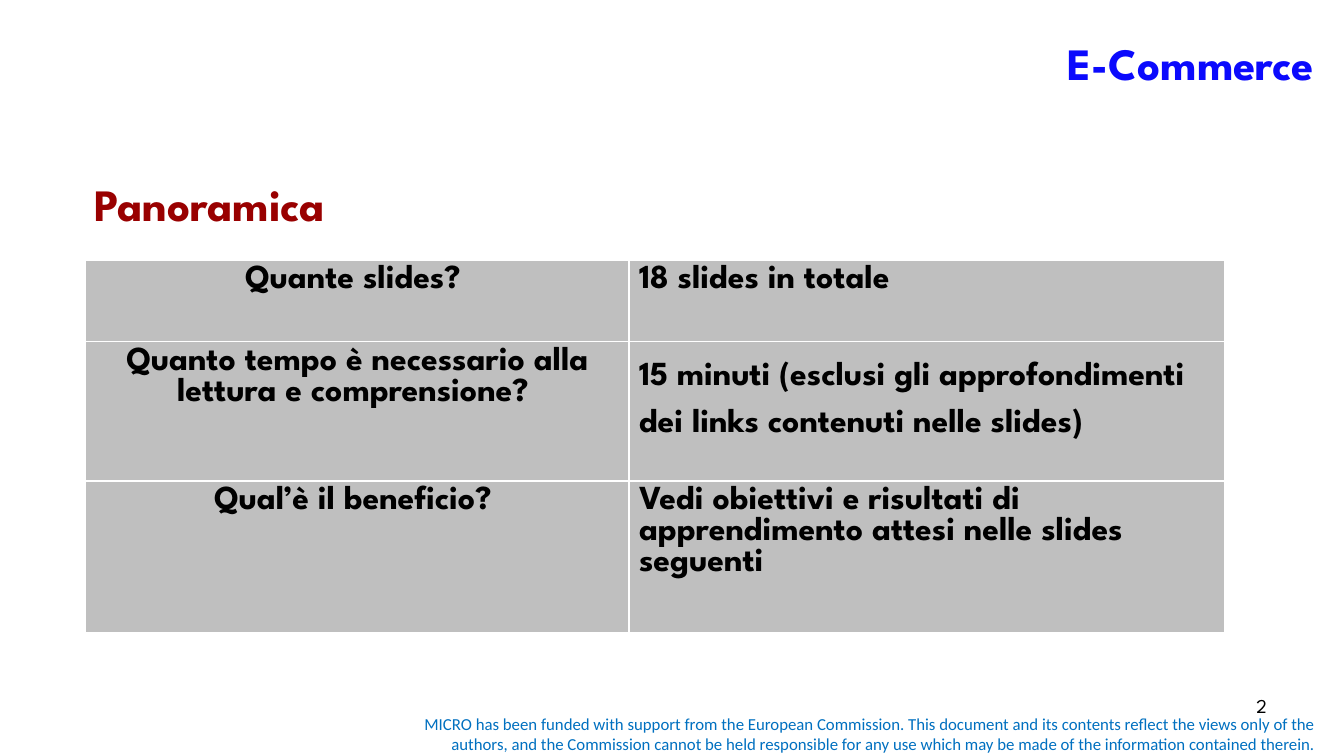
from dataclasses import dataclass
from lxml.etree import SubElement
from pptx import Presentation
from pptx.dml.color import RGBColor as RGB
from pptx.enum.text import MSO_ANCHOR as Anchor, PP_ALIGN as Align
from pptx.oxml.ns import qn
from pptx.util import Cm, Pt


@dataclass(frozen=True)
class Theme:
    heading_font: str = "League Spartan"
    note_font: str = "Calibri"
    title: str = "0B0AFD"
    section: str = "990000"
    text: str = "000000"
    note: str = "0070C0"
    cell: str = "BFBFBF"
    border: str = "FFFFFF"
    heading_size: int = 32
    table_size: int = 24
    number_size: int = 14
    note_size: int = 12


def write(tf, text, size, color, font, bold=False, align=Align.LEFT,
          anchor=Anchor.TOP, spacing=None):
    tf.word_wrap = True
    tf.vertical_anchor = anchor
    p = tf.paragraphs[0]
    p.alignment = align
    if spacing:
        p.line_spacing = spacing
    r = p.add_run()
    r.text = text
    r.font.name = font
    r.font.size = Pt(size)
    r.font.bold = bold
    r.font.color.rgb = RGB.from_string(color)


def draw_borders(cell, color):
    tc_pr = cell._tc.get_or_add_tcPr()
    for i, side in enumerate(("lnL", "lnR", "lnT", "lnB")):
        ln = tc_pr.makeelement(qn(f"a:{side}"), {"w": str(Pt(1))})
        fill = SubElement(ln, qn("a:solidFill"))
        SubElement(fill, qn("a:srgbClr"), val=color)
        tc_pr.insert(i, ln)


class Deck:
    def __init__(self, theme):
        self.theme = theme
        self.prs = Presentation()
        self.prs.slide_width, self.prs.slide_height = Cm(33.87), Cm(19.05)
        self.slide = self.prs.slides.add_slide(self.prs.slide_layouts[5])

    def title(self, text, box):
        sp = self.slide.shapes.title
        sp.left, sp.top, sp.width, sp.height = map(Cm, box)
        t = self.theme
        write(sp.text_frame, text, t.heading_size, t.title, t.heading_font,
              bold=True, align=Align.RIGHT, anchor=Anchor.MIDDLE)

    def text(self, text, box, size, color, font, **fmt):
        sp = self.slide.shapes.add_textbox(*map(Cm, box))
        write(sp.text_frame, text, size, color, font, **fmt)

    def table(self, rows, left, top, widths, heights, spacings):
        t = self.theme
        frame = self.slide.shapes.add_table(
            len(rows), len(widths), Cm(left), Cm(top),
            Cm(sum(widths)), Cm(sum(heights)))
        table = frame.table
        for col, width in zip(table.columns, widths):
            col.width = Cm(width)
        for i, (row, texts) in enumerate(zip(table.rows, rows)):
            row.height = Cm(heights[i])
            for j, (cell, text) in enumerate(zip(row.cells, texts)):
                cell.fill.solid()
                cell.fill.fore_color.rgb = RGB.from_string(t.cell)
                draw_borders(cell, t.border)
                write(cell.text_frame, text, t.table_size, t.text,
                      t.heading_font, bold=True,
                      align=Align.LEFT if j else Align.CENTER,
                      spacing=spacings.get((i, j)))


def main():
    t = Theme()
    deck = Deck(t)
    deck.text("MICRO has been funded with support from the European Commission. "
              "This document and its contents reflect the views only of the "
              "authors, and the Commission cannot be held responsible for any "
              "use which may be made of the information contained therein.",
              (9.53, 17.86, 23.88, 1.27), t.note_size, t.note, t.note_font,
              align=Align.RIGHT, anchor=Anchor.MIDDLE)
    deck.table(
        [("Quante slides? ", "18 slides in totale"),
         ("Quanto tempo è necessario alla lettura e comprensione? ",
          "15 minuti (esclusi gli approfondimenti dei links contenuti "
          "nelle slides)"),
         ("Qual’è il beneficio? ",
          "Vedi obiettivi e risultati di apprendimento attesi nelle slides "
          "seguenti")],
        left=2.16, top=6.55, widths=(13.69, 15.01),
        heights=(2.06, 3.51, 3.81), spacings={(1, 1): 1.5})
    deck.text("2", (24.28, 17.35, 7.9, 1.32), t.number_size, t.text,
              t.heading_font, align=Align.RIGHT)
    deck.text("Panoramica", (2.13, 4.34, 7.37, 1.63), t.heading_size,
              t.section, t.heading_font, bold=True)
    deck.title("E-Commerce", (2.9, 0, 30.48, 3.18))
    deck.prs.save("out.pptx")


if __name__ == "__main__":
    main()
